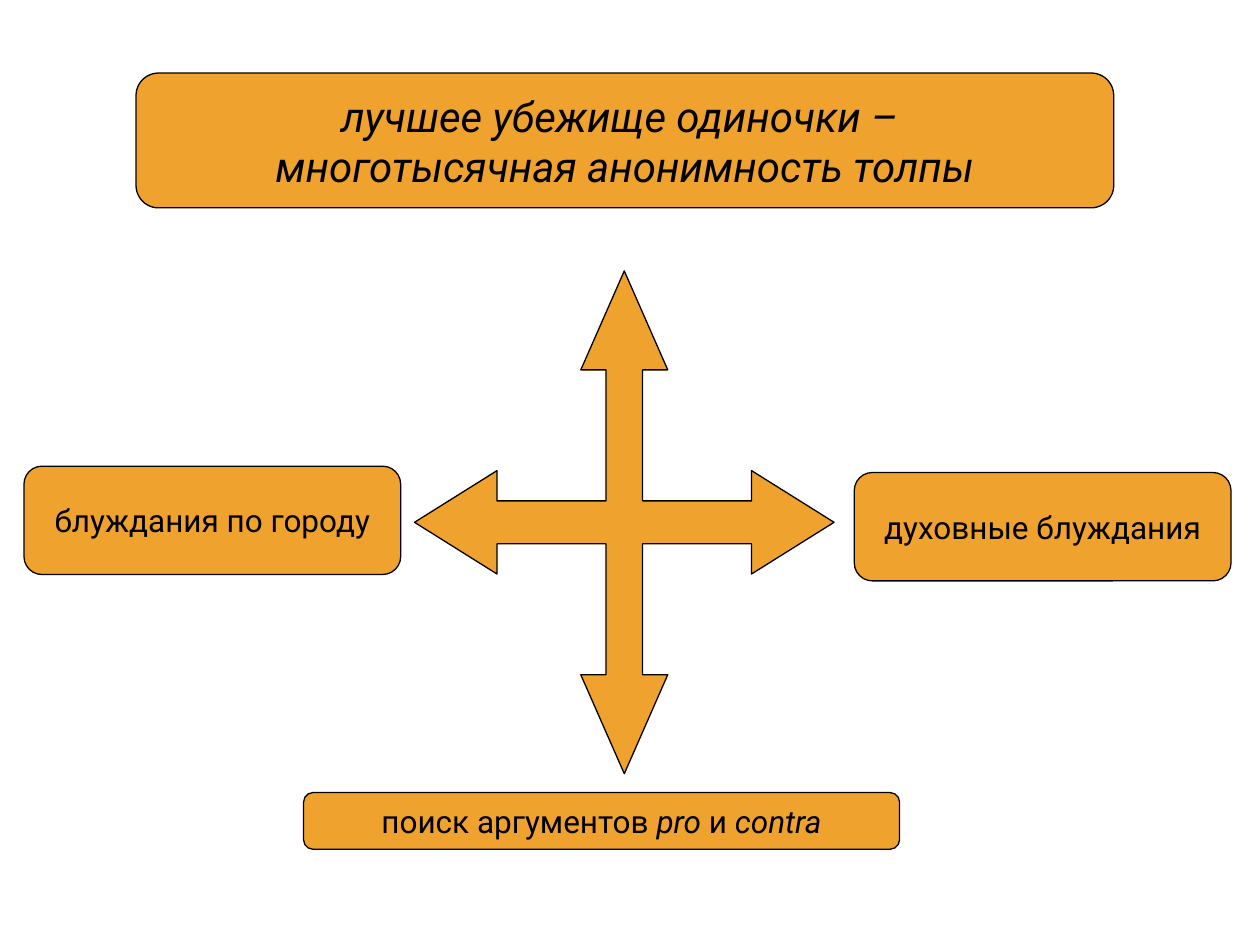
import pptx
import pptx.util
import pptx.dml.color
import pptx.enum.shapes
import pptx.enum.text

SHAPES = pptx.enum.shapes.MSO_SHAPE
THEME = {
    "fill": pptx.dml.color.RGBColor(0xF0, 0xA2, 0x2E),
    "ink": pptx.dml.color.RGBColor(0, 0, 0),
    "font": "Roboto",
    "title": pptx.util.Pt(24),
    "label": pptx.util.Pt(18),
    "line": pptx.util.Pt(0.75),
}
WIDTH, HEIGHT = pptx.util.Inches(10), pptx.util.Inches(7.5)

# Places are left, top, width, height in percent of the slide.
# Paragraphs are lists of (text, italic) spans.
BOXES = [
    (SHAPES.ROUNDED_RECTANGLE, (1.9, 49.33, 29.9, 11.47), "label",
     [[("блуждания по городу", False)]]),
    (SHAPES.FLOWCHART_ALTERNATE_PROCESS, (24.1, 83.87, 47.3, 6), "label",
     [[("поиск аргументов ", False), ("pro ", True), ("и ", False), ("contra", True)]]),
    (SHAPES.ROUNDED_RECTANGLE, (67.8, 50, 29.9, 11.47), "label",
     [[("духовные блуждания", False)]]),
    (SHAPES.ROUNDED_RECTANGLE, (10.8, 7.73, 77.6, 14.27), "title",
     [[("лучшее убежище одиночки – ", True)],
      [("многотысячная анонимность толпы", True)]]),
]

# Four-way arrow: (x, y) pairs in percent of the slide's width and height
CENTRE = (49.55, 55.27)
REACH = (16.65, 26.6)
HEAD_LENGTH = (6.55, 10.47)
HEAD_HALF = (3.45, 5.47)
SHAFT_HALF = (1.45, 2.27)


def across(percent):
    return round(WIDTH * percent / 100)


def down(percent):
    return round(HEIGHT * percent / 100)


def paint(shape):
    shape.shadow.inherit = False
    shape.fill.solid()
    shape.fill.fore_color.rgb = THEME["fill"]
    shape.line.color.rgb = THEME["ink"]
    shape.line.width = THEME["line"]


def add_box(page, kind, place, size, paragraphs):
    left, top, width, height = place
    box = page.shapes.add_shape(kind, across(left), down(top), across(width), down(height))
    paint(box)
    frame = box.text_frame
    frame.word_wrap = False
    frame.vertical_anchor = pptx.enum.text.MSO_ANCHOR.MIDDLE
    for index, spans in enumerate(paragraphs):
        para = frame.add_paragraph() if index else frame.paragraphs[0]
        para.alignment = pptx.enum.text.PP_ALIGN.CENTER
        for text, italic in spans:
            span = para.add_run()
            span.text = text
            span.font.name = THEME["font"]
            span.font.size = THEME[size]
            span.font.italic = italic
            span.font.color.rgb = THEME["ink"]


def add_cross_arrow(page):
    # One quarter from the top tip to the right tip, then mirrored twice
    neck_x, neck_y = (reach - head for reach, head in zip(REACH, HEAD_LENGTH))
    quarter = [
        (0, -REACH[1]), (HEAD_HALF[0], -neck_y), (SHAFT_HALF[0], -neck_y),
        (SHAFT_HALF[0], -SHAFT_HALF[1]),
        (neck_x, -SHAFT_HALF[1]), (neck_x, -HEAD_HALF[1]), (REACH[0], 0),
    ]
    half = quarter + [(x, -y) for x, y in quarter[-2::-1]]
    outline = half + [(-x, y) for x, y in half[-2:0:-1]]
    points = [(across(CENTRE[0] + x), down(CENTRE[1] + y)) for x, y in outline]
    builder = page.shapes.build_freeform(*points[0])
    builder.add_line_segments(points[1:], close=True)
    paint(builder.convert_to_shape())


def main():
    deck = pptx.Presentation()
    deck.slide_width, deck.slide_height = WIDTH, HEIGHT
    page = deck.slides.add_slide(deck.slide_layouts[6])
    add_cross_arrow(page)
    for box in BOXES:
        add_box(page, *box)
    deck.save("out.pptx")


if __name__ == "__main__":
    main()
